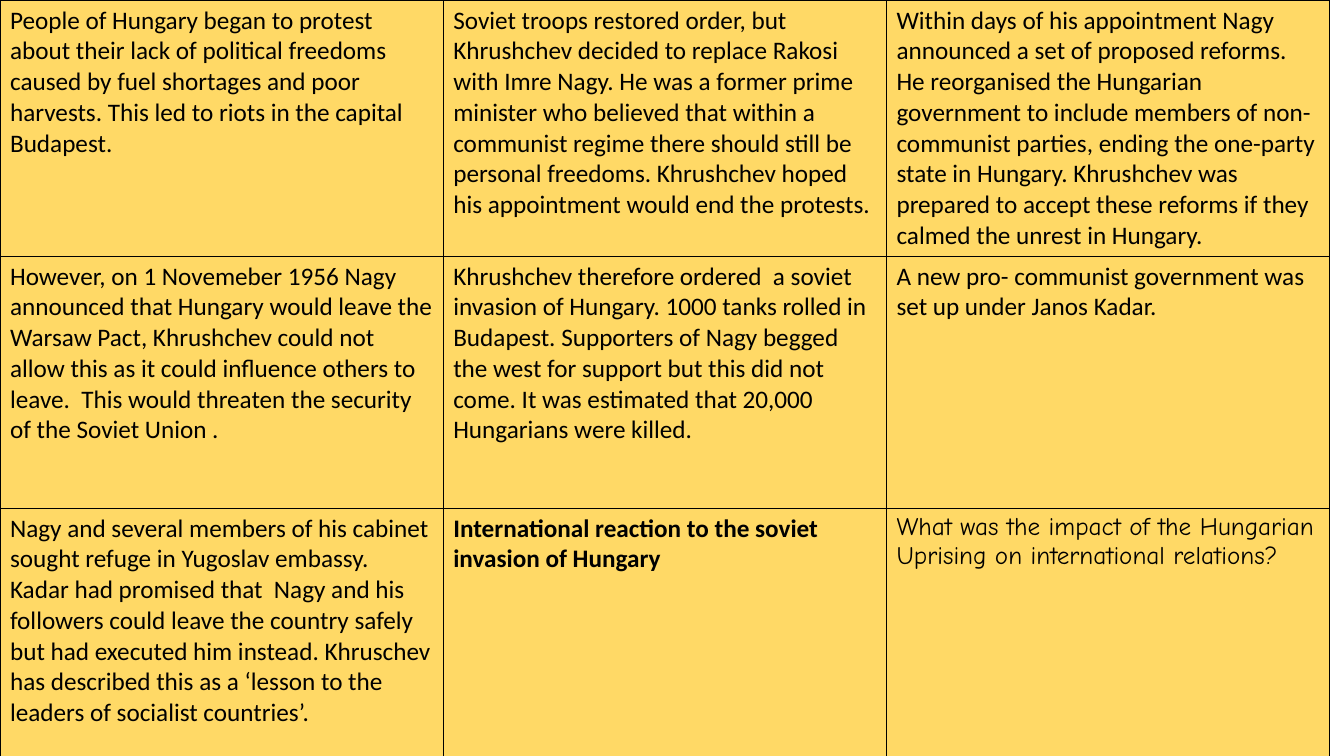
from lxml import etree
from pptx import Presentation
from pptx.dml.color import RGBColor
from pptx.oxml.ns import qn
from pptx.util import Cm, Pt

BLACK = RGBColor(0x00, 0x00, 0x00)
GOLD = RGBColor(0xFF, 0xD9, 0x66)

BODY_FONT = "Calibri"
QUESTION_FONT = "Comic Neue"
COLUMN_WIDTH = Cm(11.17)
ROW_HEIGHT = Cm(6.35)
BLANK_LAYOUT = 6

# Story of the uprising, row by row
EVENTS = [
    [
        "People of Hungary began to protest about their lack of political "
        "freedoms caused by fuel shortages and poor harvests. This led to "
        "riots in the capital Budapest.",
        "Soviet troops restored order, but Khrushchev decided to replace "
        "Rakosi with Imre Nagy. He was a former prime minister who believed "
        "that within a communist regime there should still be personal "
        "freedoms. Khrushchev hoped his appointment would end the protests.",
        "Within days of his appointment Nagy announced a set of proposed "
        "reforms. He reorganised the Hungarian government to include members "
        "of non-communist parties, ending the one-party state in Hungary. "
        "Khrushchev was prepared to accept these reforms if they calmed the "
        "unrest in Hungary.",
    ],
    [
        "However, on 1 Novemeber 1956 Nagy announced that Hungary would leave "
        "the Warsaw Pact, Khrushchev could not allow this as it could "
        "influence others to leave.  This would threaten the security of the "
        "Soviet Union .",
        "Khrushchev therefore ordered  a soviet invasion of Hungary. 1000 "
        "tanks rolled in Budapest. Supporters of Nagy begged the west for "
        "support but this did not come. It was estimated that 20,000 "
        "Hungarians were killed.",
        "A new pro- communist government was set up under Janos Kadar.",
    ],
    [
        "Nagy and several members of his cabinet sought refuge in Yugoslav "
        "embassy. Kadar had promised that  Nagy and his followers could leave "
        "the country safely but had executed him instead. Khruschev has "
        "described this as a ‘lesson to the leaders of socialist countries’.",
        "International reaction to the soviet invasion of Hungary",
        "What was the impact of the Hungarian Uprising on international "
        "relations?",
    ],
]
REACTION_HEADING = (2, 1)
IMPACT_QUESTION = (2, 2)


def add_borders(cell):
    """Draw a thin black line on all four sides of a cell."""
    properties = cell._tc.get_or_add_tcPr()
    for position, side in enumerate(("lnL", "lnR", "lnT", "lnB")):
        line = etree.Element(qn(f"a:{side}"), w=str(Pt(1)))
        fill = etree.SubElement(line, qn("a:solidFill"))
        etree.SubElement(fill, qn("a:srgbClr"), val=str(BLACK))
        properties.insert(position, line)


def fill_cell(cell, text, font_name=BODY_FONT, bold=False):
    cell.fill.solid()
    cell.fill.fore_color.rgb = GOLD
    add_borders(cell)
    cell.text = text
    font = cell.text_frame.paragraphs[0].font
    font.name = font_name
    font.size = Pt(18)
    font.bold = bold
    font.color.rgb = BLACK


def add_event_grid(slide):
    row_count, column_count = len(EVENTS), len(EVENTS[0])
    grid = slide.shapes.add_table(
        row_count, column_count, 0, 0,
        COLUMN_WIDTH * column_count, ROW_HEIGHT * row_count,
    ).table
    grid.first_row = False
    grid.horz_banding = False
    for row, events in enumerate(EVENTS):
        for column, event in enumerate(events):
            place = (row, column)
            fill_cell(
                grid.cell(row, column), event,
                QUESTION_FONT if place == IMPACT_QUESTION else BODY_FONT,
                place == REACTION_HEADING,
            )


def main():
    presentation = Presentation()
    presentation.slide_width = Cm(33.87)
    presentation.slide_height = Cm(19.05)
    slide = presentation.slides.add_slide(
        presentation.slide_layouts[BLANK_LAYOUT])
    add_event_grid(slide)
    presentation.save("out.pptx")


if __name__ == "__main__":
    main()
